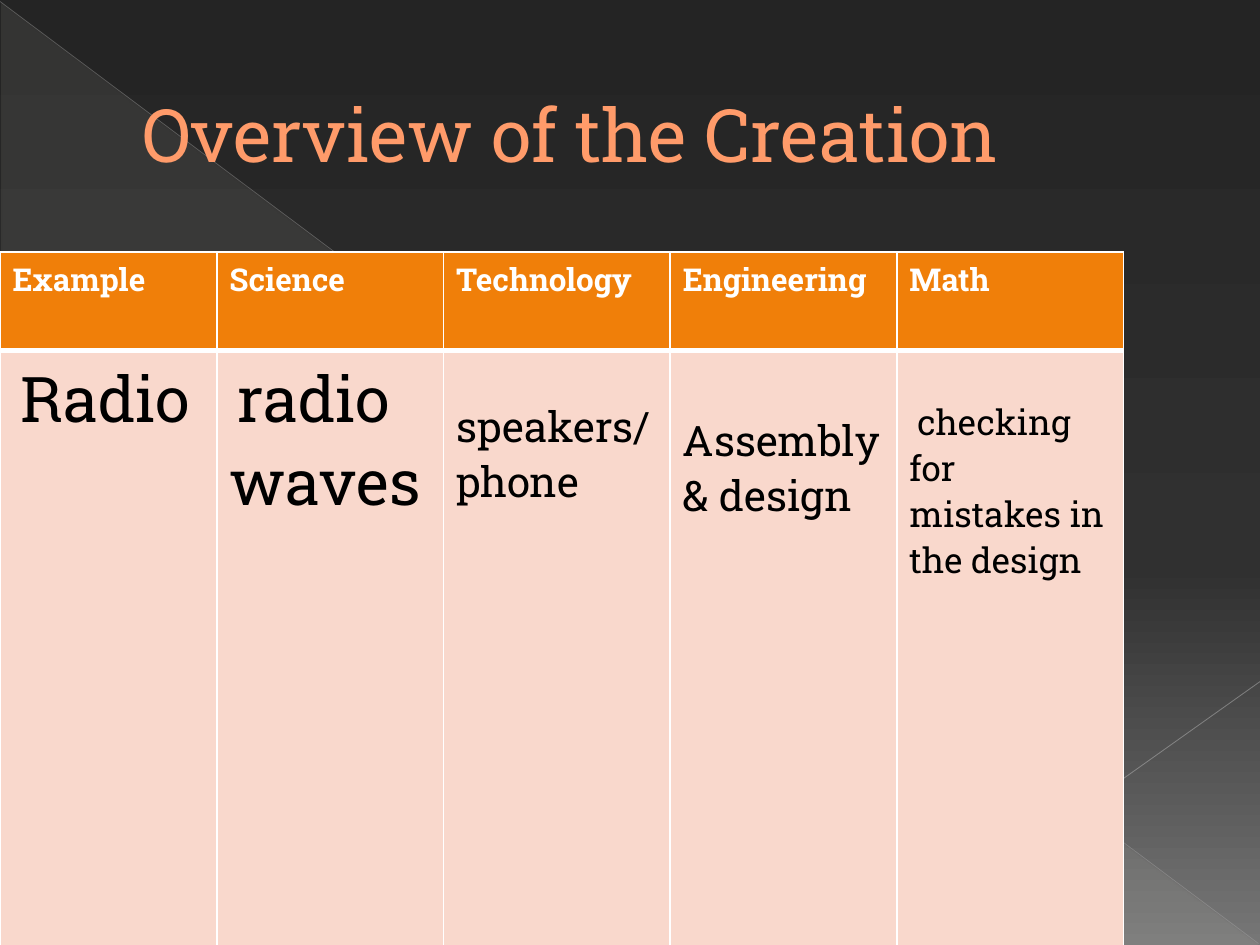
from lxml import etree
from pptx import Presentation
from pptx.dml.color import RGBColor
from pptx.enum.shapes import MSO_CONNECTOR, MSO_SHAPE
from pptx.enum.text import MSO_ANCHOR
from pptx.oxml.ns import qn
from pptx.util import Cm, Pt

LINE = MSO_CONNECTOR.STRAIGHT
WEDGE = MSO_SHAPE.RIGHT_TRIANGLE
MIDDLE = MSO_ANCHOR.MIDDLE
FONT = "Roboto Slab"

WHITE = RGBColor(0xFF, 0xFF, 0xFF)
BLACK = RGBColor(0, 0, 0)
CORAL = RGBColor(0xFF, 0x9B, 0x6A)
ORANGE = RGBColor(0xF0, 0x7F, 0x09)
PINK = RGBColor(0xF9, 0xD8, 0xCC)
SILVER = RGBColor(0xB6, 0xB6, 0xB6)
GRAY = RGBColor(0xBF, 0xBF, 0xBF)
CREAM = RGBColor(0xE3, 0xDE, 0xD1)
NIGHT = RGBColor(0x24, 0x24, 0x24)
COAL = RGBColor(0x30, 0x30, 0x30)
ASH = RGBColor(0x76, 0x76, 0x76)

# Content
TITLE = "Overview of the Creation"
HEADS = ["Example", "Science", "Technology", "Engineering", "Math"]
# text, size in points, space above in cm, first-line indent in cm
BODY = [
    ("Radio", 36, 0, 0.16),
    ("radio waves", 36, 0, 0.16),
    ("speakers/phone", 24, 0.84, 0),
    ("Assembly & design", 24, 1.12, 0),
    ("checking for mistakes in the design", 20, 0.84, 0.16),
]
# position in percent, colour, opacity in percent
SKY = [(0, NIGHT, 100), (60, COAL, 100), (100, ASH, 100)]
SHEEN = [(0, CREAM, 10), (70, CREAM, 8), (100, CREAM, 1)]
# start, end, colour, width in points, opacity in percent
RAYS = [
    ((0, 0.03), (25.37, 19.02), SILVER, 0.39, 35),
    ((25.4, 13.74), (17.96, 19.02), GRAY, 0.47, 45),
]
WIDTHS = [4.37] + [4.57] * 4
HEIGHTS = [1.98, 18.59]
PAD = 0.13


def add_color(parent, color, alpha=100):
    node = etree.SubElement(parent, qn("a:srgbClr"), val=str(color))
    if alpha < 100:
        etree.SubElement(node, qn("a:alpha"), val=str(alpha * 1000))


def set_grad(fill, root, stops, angle):
    fill.gradient()
    grad = next(root.iter(qn("a:gradFill")))
    for child in list(grad):
        grad.remove(child)
    items = etree.SubElement(grad, qn("a:gsLst"))
    for pos, color, alpha in stops:
        stop = etree.SubElement(items, qn("a:gs"), pos=str(pos * 1000))
        add_color(stop, color, alpha)
    etree.SubElement(grad, qn("a:lin"), ang=str(angle * 60000), scaled="0")


def set_text(frame, text, size, color, bold=False, indent=0):
    frame.text = text
    para = frame.paragraphs[0]
    if indent:
        para._p.get_or_add_pPr().set("indent", str(Cm(indent)))
    font = para.runs[0].font
    font.name, font.size, font.bold = FONT, Pt(size), bold
    font.color.rgb = color


def set_cell(cell, fill, edges):
    props = cell._tc.get_or_add_tcPr()
    for side, width in edges.items():
        edge = etree.SubElement(props, qn("a:ln" + side), w=str(Pt(width)))
        add_color(etree.SubElement(edge, qn("a:solidFill")), WHITE)
    cell.fill.solid()
    cell.fill.fore_color.rgb = fill


deck = Presentation()
deck.slide_width, deck.slide_height = Cm(25.4), Cm(19.05)
slide = deck.slides.add_slide(deck.slide_layouts[6])
shapes = slide.shapes

# Backdrop
set_grad(slide.background.fill, slide.element, SKY, 90)
wedge = shapes.add_shape(WEDGE, Cm(0.03), Cm(0.05), Cm(25.35), Cm(19))
wedge.shadow.inherit = False
wedge.line.fill.background()
set_grad(wedge.fill, wedge.element, SHEEN, 133)

for start, end, color, width, alpha in RAYS:
    ray = shapes.add_connector(LINE, *map(Cm, start + end))
    ray.line.color.rgb = color
    ray.line.width = Pt(width)
    tint = next(ray.element.spPr.iter(qn("a:srgbClr")))
    etree.SubElement(tint, qn("a:alpha"), val=str(alpha * 1000))
    etree.SubElement(ray.element.spPr, qn("a:effectLst"))

# Title
box = shapes.add_textbox(Cm(1.27), Cm(0.74), Cm(22.86), Cm(3.89))
frame = box.text_frame
frame.word_wrap = True
frame.vertical_anchor = MIDDLE
frame.margin_left = Cm(1.6)
set_text(frame, TITLE, 42, CORAL)

# Table
table = shapes.add_table(2, len(HEADS), 0, Cm(5.08),
                         Cm(sum(WIDTHS)), Cm(sum(HEIGHTS))).table
for row, height in zip(table.rows, HEIGHTS):
    row.height = Cm(height)
for col, width in enumerate(WIDTHS):
    table.columns[col].width = Cm(width)
    head, cell = table.cell(0, col), table.cell(1, col)
    set_cell(head, ORANGE, {"L": 1, "R": 1, "T": 1, "B": 3})
    set_text(head.text_frame, HEADS[col], 18, WHITE, bold=True)
    text, size, above, indent = BODY[col]
    set_cell(cell, PINK, {"L": 1, "R": 1, "T": 3, "B": 1})
    cell.margin_top = Cm(PAD + above)
    set_text(cell.text_frame, text, size, BLACK, indent=indent)

deck.save("out.pptx")
